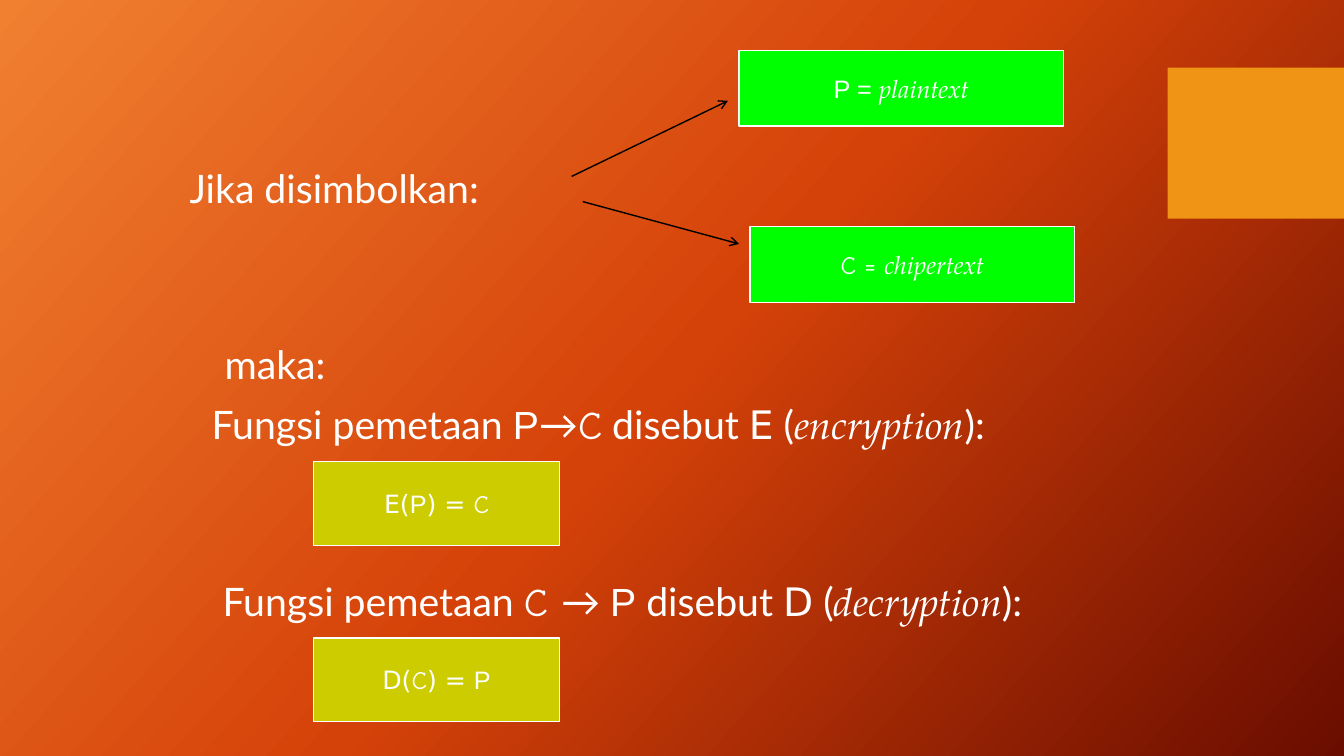
from copy import deepcopy
from dataclasses import dataclass

from lxml import etree
from pptx import Presentation
from pptx.dml.color import RGBColor
from pptx.enum.shapes import MSO_CONNECTOR, MSO_SHAPE
from pptx.enum.text import MSO_ANCHOR, MSO_AUTO_SIZE, PP_ALIGN
from pptx.oxml.ns import qn
from pptx.util import Inches, Pt

RECT, LINE = MSO_SHAPE.RECTANGLE, MSO_CONNECTOR.STRAIGHT
TOP, MIDDLE = MSO_ANCHOR.TOP, MSO_ANCHOR.MIDDLE
LEFT, CENTER = PP_ALIGN.LEFT, PP_ALIGN.CENTER
FIT, FIXED = MSO_AUTO_SIZE.SHAPE_TO_FIT_TEXT, MSO_AUTO_SIZE.NONE

WHITE = RGBColor(0xFF, 0xFF, 0xFF)
BLACK = RGBColor(0x00, 0x00, 0x00)
GREEN = RGBColor(0x00, 0xFF, 0x00)
OLIVE = RGBColor(0xCC, 0xCC, 0x00)
AMBER = RGBColor(0xF0, 0x94, 0x15)
GLOW = [(0, RGBColor(0xF1, 0x80, 0x31)), (50, RGBColor(0xD5, 0x42, 0x09)),
        (100, RGBColor(0x6A, 0x0D, 0x00))]

LATO, ARIAL, COMIC = "Lato", "Arial", "Comic Neue"
DEJAVU, PAGELLA = "DejaVu Sans", "TeX Gyre Pagella"

Runs = list[tuple[str, str]]


@dataclass
class Box:
    left: float
    top: float
    width: float
    height: float
    fill: RGBColor
    runs: Runs


@dataclass
class Label:
    left: float
    top: float
    width: float
    runs: Runs


@dataclass
class Arrow:
    start: tuple[float, float]
    end: tuple[float, float]


def write(shape, runs: Runs, *, size: int, align=LEFT, anchor=TOP, fit=FIT) -> None:
    frame = shape.text_frame
    frame.word_wrap = False
    frame.auto_size = fit
    frame.vertical_anchor = anchor
    para = frame.paragraphs[0]
    para.alignment = align
    for text, face in runs:
        run = para.add_run()
        run.text = text
        font = run.font
        font.name, font.size = face, Pt(size)
        font.italic = face == PAGELLA
        font.color.rgb = WHITE


def place(shape, label: Label) -> None:
    shape.left, shape.top = Inches(label.left), Inches(label.top)
    shape.width, shape.height = Inches(label.width), Inches(0.57)
    write(shape, label.runs, size=28)


def add_rect(slide, box: Box):
    shape = slide.shapes.add_shape(RECT, Inches(box.left), Inches(box.top),
                                   Inches(box.width), Inches(box.height))
    shape.shadow.inherit = False
    shape.fill.solid()
    shape.fill.fore_color.rgb = box.fill
    if box.runs:
        shape.line.color.rgb = WHITE
        shape.line.width = Pt(1)
        write(shape, box.runs, size=18, align=CENTER, anchor=MIDDLE, fit=FIXED)
    else:
        shape.line.fill.background()


def add_arrow(slide, arrow: Arrow) -> None:
    ends = [Inches(v) for v in arrow.start + arrow.end]
    link = slide.shapes.add_connector(LINE, *ends)
    link.line.color.rgb = BLACK
    link.line.width = Pt(1)
    etree.SubElement(link.line._get_or_add_ln(), qn("a:tailEnd"), type="arrow")
    etree.SubElement(link._element.spPr, qn("a:effectLst"))


def paint(slide) -> None:
    fill = slide.background.fill
    fill.gradient()
    fill.gradient_angle = 360 - 42
    stops = slide._element.find(".//" + qn("a:gsLst"))
    stops.append(deepcopy(stops[-1]))
    for stop, (spot, color) in zip(fill.gradient_stops, GLOW):
        stop.position = spot / 100
        stop.color.rgb = color


def mapping(source: Runs, name: str, word: str) -> Runs:
    return [("Fungsi pemetaan ", LATO), *source, (" disebut ", LATO),
            (name, DEJAVU), (" (", LATO), (word, PAGELLA), ("):", LATO)]


def formula(name: str, source: tuple[str, str], target: tuple[str, str]) -> Runs:
    return [(name + "(", DEJAVU), source, (") = ", DEJAVU), target]


PLAIN, CIPHER = ("P", ARIAL), ("C", COMIC)

HEAD = Label(1.78, 1.58, 3.26, [("Jika disimbolkan:", LATO)])
LABELS = [
    Label(2.13, 3.33, 1.28, [("maka:", LATO)]),
    Label(2, 3.92, 8.22,
          mapping([PLAIN, ("→", LATO), CIPHER], "E", "encryption")),
    Label(2.11, 5.68, 8.47,
          mapping([("C ", COMIC), ("→ ", LATO), PLAIN], "D", "decryption")),
]
BOXES = [
    Box(11.58, 0.67, 1.75, 1.5, AMBER, []),
    Box(7.44, 2.25, 3.22, 0.75, GREEN, [("C = ", COMIC), ("chipertext", PAGELLA)]),
    Box(7.33, 0.5, 3.22, 0.75, GREEN, [("P = ", ARIAL), ("plaintext", PAGELLA)]),
    Box(3.11, 4.58, 2.44, 0.83, OLIVE, formula("E", PLAIN, CIPHER)),
    Box(3.11, 6.33, 2.44, 0.83, OLIVE, formula("D", CIPHER, PLAIN)),
]
ARROWS = [Arrow((5.67, 1.75), (7.22, 1)), Arrow((5.78, 2), (7.33, 2.42))]


def main() -> None:
    deck = Presentation()
    deck.slide_width, deck.slide_height = Inches(13.33), Inches(7.5)
    slide = deck.slides.add_slide(deck.slide_layouts[5])
    paint(slide)

    # Heading and symbols
    place(slide.shapes.title, HEAD)
    for box in BOXES:
        add_rect(slide, box)
    for arrow in ARROWS:
        add_arrow(slide, arrow)

    # Mapping sentences
    for label in LABELS:
        place(slide.shapes.add_textbox(0, 0, 0, 0), label)

    deck.save("out.pptx")


if __name__ == "__main__":
    main()
